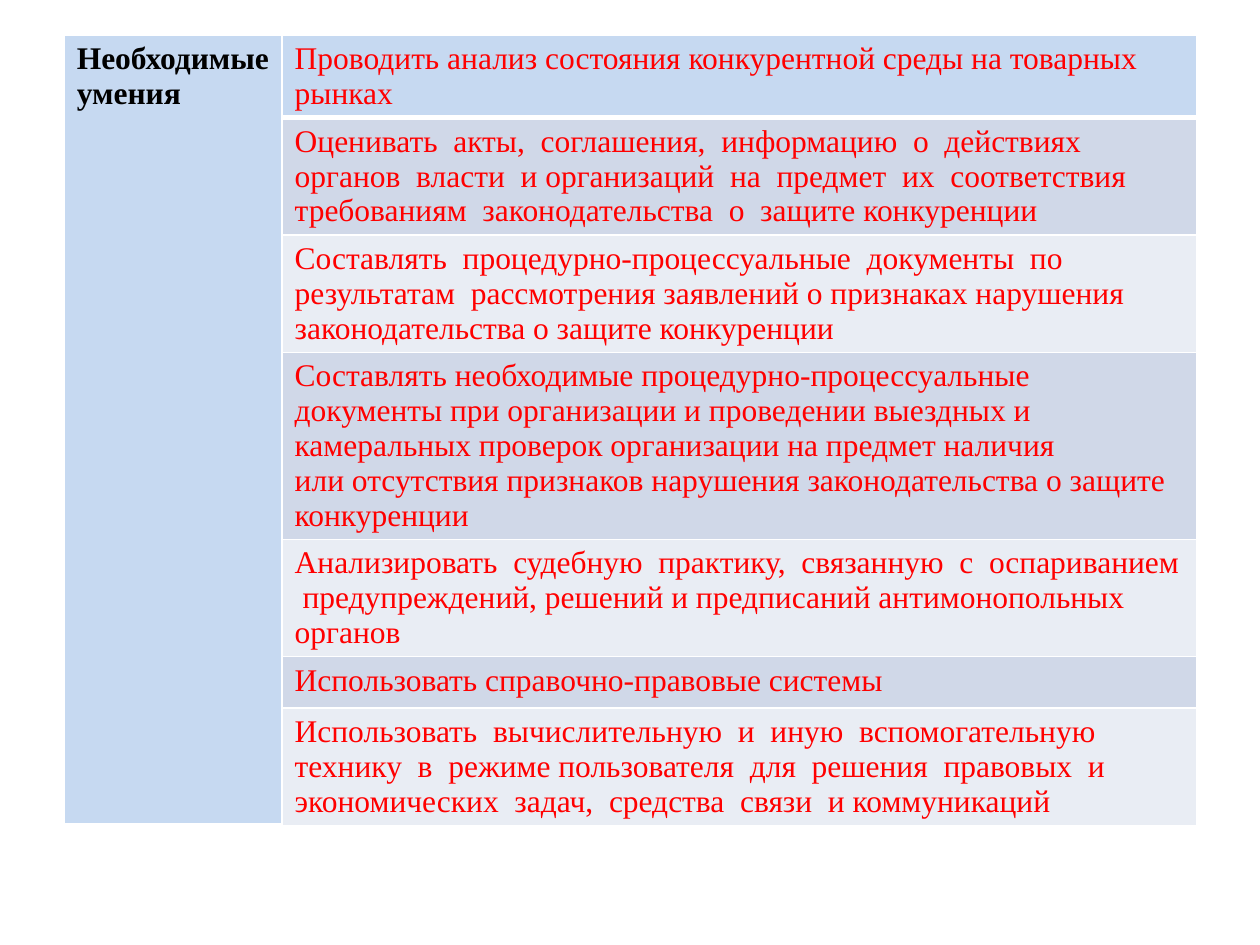
"""Build a slide with a table of required professional skills."""
from dataclasses import dataclass

from lxml.etree import SubElement
from pptx import Presentation
from pptx.dml.color import RGBColor
from pptx.oxml.ns import qn
from pptx.table import _Cell
from pptx.util import Pt

COLORS = {"head": "C6D9F1", "dark": "D0D8E8", "light": "E9EDF4",
          "line": "FFFFFF", "label": "000000", "skill": "FF0000"}
FONT = {"name": "Times New Roman", "size": Pt(18)}
COLS = (124.5, 522.8)
ROW_H = 29.5
LABEL = "Необходимые умения"
SKILLS = (
    "Проводить анализ состояния конкурентной среды на товарных рынках",
    "Оценивать  акты,  соглашения,  информацию  о  действиях органов  власти  и организаций  на  предмет  их  "
    "соответствия  требованиям  законодательства  о  защите конкуренции",
    "Составлять  процедурно-процессуальные  документы  по  результатам  рассмотрения заявлений о признаках "
    "нарушения законодательства о защите конкуренции",
    "Составлять необходимые процедурно-процессуальные документы при организации и проведении выездных и "
    "камеральных проверок организации на предмет наличия\n"
    "или отсутствия признаков нарушения законодательства о защите конкуренции",
    "Анализировать  судебную  практику,  связанную  с  оспариванием  предупреждений, решений и предписаний "
    "антимонопольных органов",
    "Использовать справочно-правовые системы",
    "Использовать  вычислительную  и  иную  вспомогательную  технику  в  режиме пользователя  для  решения  "
    "правовых  и  экономических  задач,  средства  связи  и коммуникаций",
)


@dataclass
class CellStyle:
    """Look of one table cell."""
    fill: str
    color: str
    bold: bool = False
    top: float = 1
    bottom: float = 1


def set_borders(cell: _Cell, style: CellStyle) -> None:
    """Draw the four borders of a cell ahead of its fill."""
    tcPr = cell._tc.get_or_add_tcPr()
    widths = {"a:lnL": 1, "a:lnR": 1, "a:lnT": style.top, "a:lnB": style.bottom}
    for i, (tag, width) in enumerate(widths.items()):
        ln = SubElement(tcPr, qn(tag), w=str(Pt(width)))
        SubElement(SubElement(ln, qn("a:solidFill")), qn("a:srgbClr"), val=COLORS["line"])
        tcPr.insert(i, ln)


def fill_cell(cell: _Cell, text: str, style: CellStyle) -> None:
    """Write and format one cell."""
    cell.fill.solid()
    cell.fill.fore_color.rgb = RGBColor.from_string(COLORS[style.fill])
    set_borders(cell, style)
    cell.text_frame.text = text
    for p in cell.text_frame.paragraphs:
        for r in p.runs:
            for key, value in {**FONT, "bold": style.bold}.items():
                setattr(r.font, key, value)
            r.font.color.rgb = RGBColor.from_string(COLORS[style.color])


def skill_style(row: int) -> CellStyle:
    """Give the header look to the first row and bands to the rest."""
    if row == 0:
        return CellStyle("head", "skill", bottom=3)
    return CellStyle("dark" if row % 2 else "light", "skill", top=3 if row == 1 else 1)


def main() -> None:
    """Create the presentation and save it."""
    prs = Presentation()
    prs.slide_width, prs.slide_height = Pt(720), Pt(540)
    s = prs.slides.add_slide(prs.slide_layouts[6])
    n = len(SKILLS)
    table = s.shapes.add_table(n, len(COLS), Pt(36.7), Pt(20.2), Pt(sum(COLS)), Pt(n * ROW_H)).table
    for col, width in zip(table.columns, COLS):
        col.width = Pt(width)
    for row in table.rows:
        row.height = Pt(ROW_H)
    table.cell(0, 0).merge(table.cell(n - 1, 0))
    fill_cell(table.cell(0, 0), LABEL, CellStyle("head", "label", bold=True, bottom=3))
    for i, skill in enumerate(SKILLS):
        fill_cell(table.cell(i, 1), skill, skill_style(i))
    prs.save("out.pptx")


if __name__ == "__main__":
    main()
